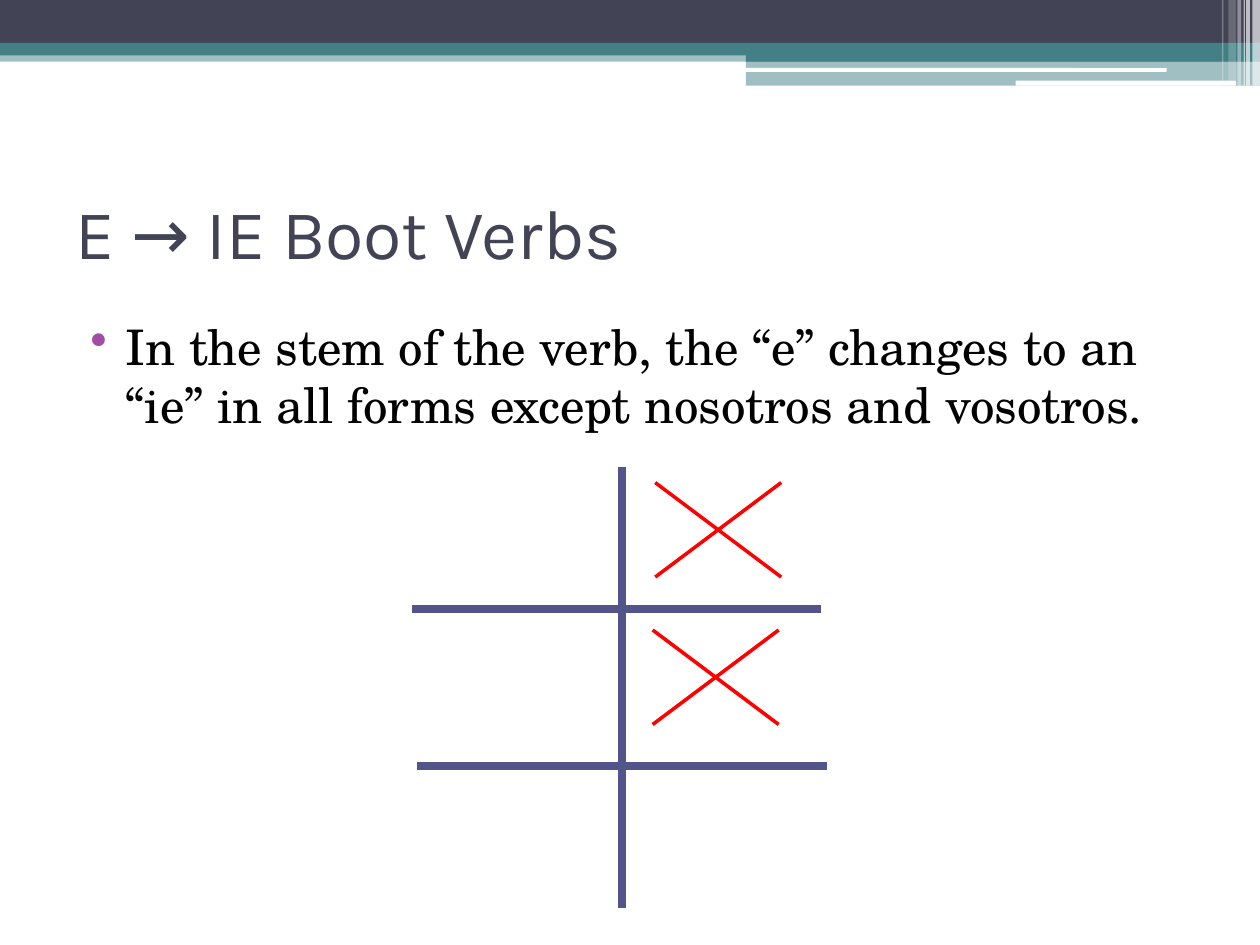
"""Build a slide on Spanish boot verbs with a crossed-out verb chart."""
from typing import NamedTuple

from lxml import etree
from pptx import Presentation
from pptx.dml.color import RGBColor
from pptx.enum.shapes import MSO_CONNECTOR, MSO_SHAPE
from pptx.enum.text import MSO_ANCHOR, MSO_AUTO_SIZE, PP_ALIGN
from pptx.oxml.ns import qn
from pptx.slide import Slide
from pptx.text.text import _Paragraph
from pptx.util import Inches, Pt

RECT = MSO_SHAPE.RECTANGLE
ROUND = MSO_SHAPE.ROUNDED_RECTANGLE
STRAIGHT = MSO_CONNECTOR.STRAIGHT
MIDDLE = MSO_ANCHOR.MIDDLE
LEFT = PP_ALIGN.LEFT
NO_FIT = MSO_AUTO_SIZE.NONE

NAVY, TEAL, WHITE = "424456", "438086", "FFFFFF"
INDIGO, RED, PURPLE, BLACK = "53548A", "FF0000", "A04DA3", "000000"


class Band(NamedTuple):
    left: float
    top: float
    width: float
    height: float
    color: str
    alpha: int = 100
    kind: int = RECT


class Line(NamedTuple):
    x1: float
    y1: float
    x2: float
    y2: float
    color: str
    width: float


BANDS = [
    Band(0, 0.4, 10, 0.09, TEAL, 50),
    Band(0, 0, 10, 0.34, NAVY),
    Band(0, 0.34, 10, 0.1, TEAL),
    Band(5.92, 0.39, 4.08, 0.1, TEAL),
    Band(5.92, 0.48, 4.08, 0.2, TEAL, 50),
    Band(5.91, 0.54, 3.35, 0.03, WHITE, kind=ROUND),
    Band(8.06, 0.64, 1.75, 0.04, WHITE, kind=ROUND),
    Band(9.94, 0, 0.06, 0.68, WHITE, 65),
    Band(9.89, 0, 0.03, 0.68, WHITE, 65),
    Band(9.87, 0, 0.01, 0.68, WHITE, 60),
    Band(9.82, 0, 0.03, 0.68, WHITE, 40),
    Band(9.75, 0, 0.06, 0.64, WHITE, 20),
    Band(9.7, 0, 0.01, 0.64, WHITE, 30),
]
GRID = [
    Line(4.94, 3.71, 4.94, 7.21, INDIGO, 4.5),
    Line(6.56, 6.08, 3.31, 6.08, INDIGO, 4.5),
    Line(6.52, 4.83, 3.27, 4.83, INDIGO, 4.5),
]
CROSSES = [(5.2, 3.83), (5.18, 5)]
CROSS_W, CROSS_H = 1, 0.75


def rgb(color: str) -> RGBColor:
    return RGBColor.from_string(color)


def draw_band(slide: Slide, band: Band) -> None:
    box = [Inches(n) for n in band[:4]]
    shape = slide.shapes.add_shape(band.kind, *box)
    shape.shadow.inherit = False
    shape.line.fill.background()
    shape.fill.solid()
    shape.fill.fore_color.rgb = rgb(band.color)
    if band.alpha < 100:
        tint = shape.fill._xPr.find(".//" + qn("a:srgbClr"))
        etree.SubElement(tint, qn("a:alpha"), val=str(band.alpha * 1000))


def draw_line(slide: Slide, line: Line) -> None:
    ends = [Inches(n) for n in line[:4]]
    shape = slide.shapes.add_connector(STRAIGHT, *ends)
    shape.line.color.rgb = rgb(line.color)
    shape.line.width = Pt(line.width)
    etree.SubElement(shape._element.spPr, qn("a:effectLst"))


def draw_cross(slide: Slide, left: float, top: float) -> None:
    right, low = left + CROSS_W, top + CROSS_H
    draw_line(slide, Line(left, top, right, low, RED, 2))
    draw_line(slide, Line(right, top, left, low, RED, 2))


def add_run(para: _Paragraph, text: str, font: str, size: int, color: str) -> None:
    run = para.add_run()
    run.text = text
    run.font.name = font
    run.font.size = Pt(size)
    run.font.color.rgb = rgb(color)


def add_bullet(para: _Paragraph, color: str) -> None:
    props = para._p.get_or_add_pPr()
    props.set("marL", str(Inches(0.4)))
    props.set("indent", str(Inches(-0.28)))
    tint = etree.SubElement(props, qn("a:buClr"))
    etree.SubElement(tint, qn("a:srgbClr"), val=color)
    etree.SubElement(props, qn("a:buChar"), char="•")


def add_title(slide: Slide) -> None:
    title = slide.shapes.title
    title.left, title.top = Inches(0.5), Inches(1.25)
    title.width, title.height = Inches(9), Inches(1.17)
    frame = title.text_frame
    frame.auto_size = NO_FIT
    frame.vertical_anchor = MIDDLE
    para = frame.paragraphs[0]
    para.alignment = LEFT
    add_run(para, "E → IE Boot Verbs", "Karla", 40, NAVY)


def add_body(slide: Slide) -> None:
    box = slide.shapes.add_textbox(Inches(0.5), Inches(2.46), Inches(9), Inches(4.73))
    frame = box.text_frame
    frame.word_wrap = True
    para = frame.paragraphs[0]
    para.space_before = Pt(3)
    add_bullet(para, PURPLE)
    text = "In the stem of the verb, the “e” changes to an “ie” in all forms except nosotros and vosotros."
    add_run(para, text, "TeX Gyre Schola", 28, BLACK)


def main() -> None:
    deck = Presentation()
    deck.slide_width, deck.slide_height = Inches(10), Inches(7.5)
    slide = deck.slides.add_slide(deck.slide_layouts[5])
    for band in BANDS:
        draw_band(slide, band)
    add_title(slide)
    add_body(slide)
    for line in GRID:
        draw_line(slide, line)
    for left, top in CROSSES:
        draw_cross(slide, left, top)
    deck.save("out.pptx")


if __name__ == "__main__":
    main()
